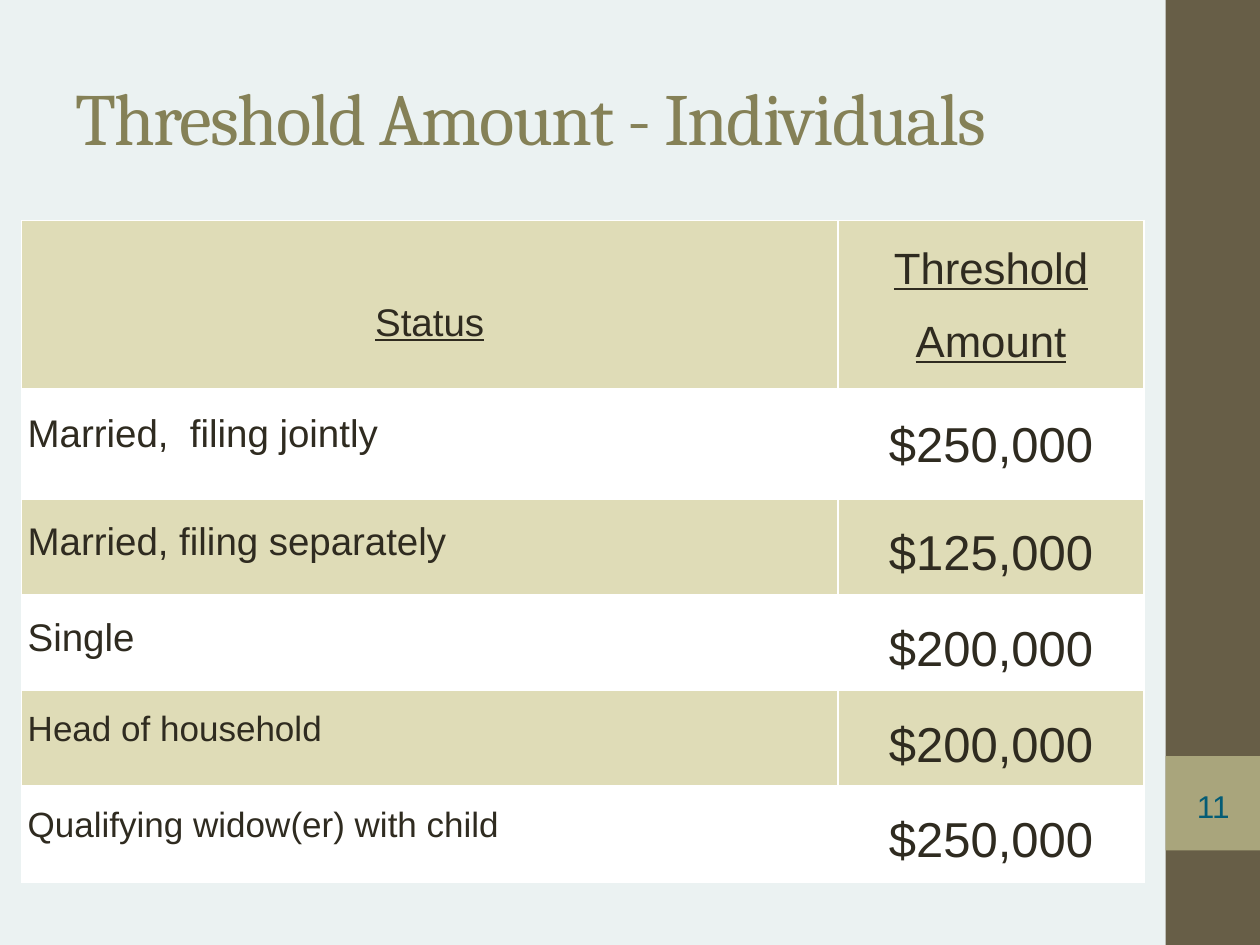
import pptx
import pptx.dml.color
import pptx.enum.shapes
import pptx.enum.text
import pptx.oxml
import pptx.oxml.ns
import pptx.util

WIDTH, HEIGHT = 10, 7.5
INK, SAND, WHITE = "2F2B20", "DFDCB7", "FFFFFF"
CENTER = pptx.enum.text.PP_ALIGN.CENTER
LEFT = pptx.enum.text.PP_ALIGN.LEFT
MIDDLE = pptx.enum.text.MSO_ANCHOR.MIDDLE
SHAPES = pptx.enum.shapes.MSO_SHAPE

# Status, its size, threshold amount
THRESHOLDS = [
    ("Married,  filing jointly", 22, "$250,000"),
    ("Married, filing separately", 22, "$125,000"),
    ("Single", 22, "$200,000"),
    ("Head of household", 20, "$200,000"),
    ("Qualifying widow(er) with child", 20, "$250,000"),
]


def color(value):
    return pptx.dml.color.RGBColor.from_string(value)


def inches(*lengths):
    return [pptx.util.Inches(length) for length in lengths]


def fill(target, value):
    target.fill.solid()
    target.fill.fore_color.rgb = color(value)


def write(paragraph, text, size, ink, font="Arial", align=LEFT):
    paragraph.alignment = align
    run = paragraph.add_run()
    run.text = text
    run.font.name = font
    run.font.size = pptx.util.Pt(size)
    run.font.color.rgb = color(ink)
    return run


def add_plain_shape(slide, kind, box, fill_color=None):
    shape = slide.shapes.add_shape(kind, *inches(*box))
    shape.shadow.inherit = False
    shape.line.fill.background()
    if fill_color:
        fill(shape, fill_color)
    else:
        shape.fill.background()
    return shape


def add_sidebar(slide, box, number):
    left, top, width, height = box
    add_plain_shape(slide, SHAPES.RECTANGLE, box, "675E47")
    # The number's square stands one side above the slide's foot
    square_top = top + height - 2 * width
    add_plain_shape(slide, SHAPES.RECTANGLE, (left, square_top, width, width), "A9A57C")
    page = add_plain_shape(slide, SHAPES.DOUBLE_BRACKET,
                           (left + 0.08, square_top + 0.18, 0.6, 0.43))
    frame = page.text_frame
    frame.margin_left = frame.margin_right = frame.margin_top = frame.margin_bottom = 0
    frame.vertical_anchor = MIDDLE
    write(frame.paragraphs[0], number, 18, "045C75", align=CENTER)


def add_title(slide, box, text):
    frame = slide.shapes.add_textbox(*inches(*box)).text_frame
    frame.word_wrap = True
    frame.vertical_anchor = MIDDLE
    run = write(frame.paragraphs[0], text, 42, "858157", "Cambria")
    run.font._element.set("spc", "-100")


def add_borders(cell, bottom_width):
    properties = cell._tc.get_or_add_tcPr()
    widths = {"lnL": 1, "lnR": 1, "lnT": 1, "lnB": bottom_width}
    for position, (side, width) in enumerate(widths.items()):
        properties.insert(position, pptx.oxml.parse_xml(
            f'<a:{side} {pptx.oxml.ns.nsdecls("a")} w="{pptx.util.Pt(width)}">'
            f'<a:solidFill><a:srgbClr val="{WHITE}"/></a:solidFill></a:{side}>'))


def fill_cell(cell, text, size, back, align, indent=0, drop=0, header=False):
    cell.margin_left, cell.margin_top = inches(indent, drop)
    cell.margin_right = cell.margin_bottom = 0
    fill(cell, back)
    add_borders(cell, 3 if header else 1)
    paragraph = cell.text_frame.paragraphs[0]
    paragraph.line_spacing = 1.5
    paragraph.space_before = paragraph.space_after = pptx.util.Pt(3)
    run = write(paragraph, text, size, INK, align=align)
    if header:
        run.font.underline = True


def add_threshold_table(slide, box):
    table = slide.shapes.add_table(len(THRESHOLDS) + 1, 2, *inches(*box)).table
    status_width, header_height, first_height = 6.48, 1.35, 0.86
    others = len(THRESHOLDS) - 1
    other_height = (box[3] - header_height - first_height) / others
    for column, width in zip(table.columns, (status_width, box[2] - status_width)):
        column.width = pptx.util.Inches(width)
    for row, height in zip(table.rows, [header_height, first_height] + [other_height] * others):
        row.height = pptx.util.Inches(height)

    # Header
    fill_cell(table.cell(0, 0), "Status", 22, SAND, CENTER, drop=0.47, header=True)
    fill_cell(table.cell(0, 1), "Threshold Amount", 25, SAND, CENTER, header=True)
    # Banded body
    for row, (status, size, amount) in enumerate(THRESHOLDS, start=1):
        back = WHITE if row % 2 else SAND
        fill_cell(table.cell(row, 0), status, size, back, LEFT, indent=0.05)
        fill_cell(table.cell(row, 1), amount, 28, back, CENTER)


def main():
    deck = pptx.Presentation()
    deck.slide_width, deck.slide_height = inches(WIDTH, HEIGHT)
    slide = deck.slides.add_slide(deck.slide_layouts[6])
    fill(slide.background, "EBF2F2")
    sidebar_width = 0.075 * WIDTH
    add_sidebar(slide, (WIDTH - sidebar_width, 0, sidebar_width, HEIGHT), "11")
    add_title(slide, (0.05 * WIDTH, 0.04 * HEIGHT, 8.33, 1.25), "Threshold Amount - Individuals")
    add_threshold_table(slide, (0.17, 1.75, 8.91, 0.7 * HEIGHT))
    deck.save("out.pptx")


if __name__ == "__main__":
    main()
